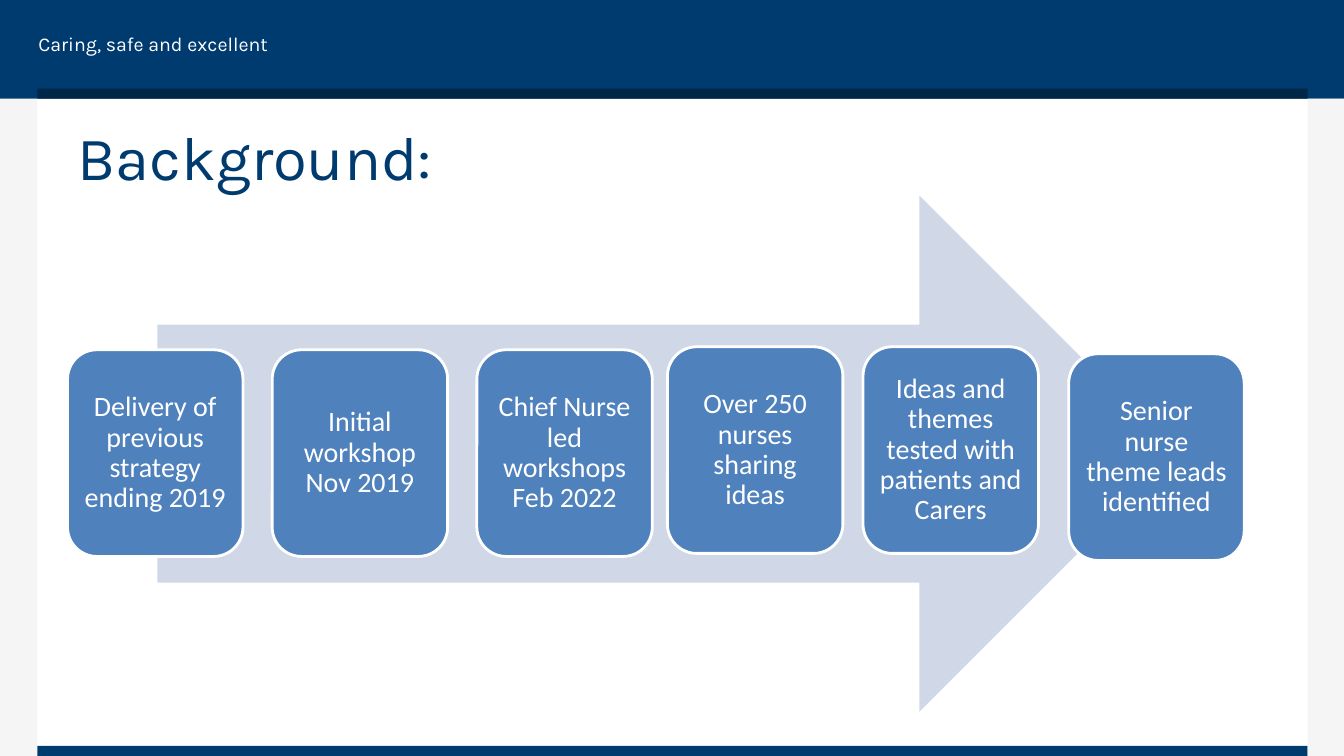
from pptx import Presentation
from pptx.dml.color import RGBColor
from pptx.enum.shapes import MSO_SHAPE as Shape
from pptx.enum.text import MSO_ANCHOR as Anchor, PP_ALIGN as Align
from pptx.util import Inches, Pt

NAVY = RGBColor(0x00, 0x3B, 0x6F)
DARK_NAVY = RGBColor(0x00, 0x26, 0x48)
MARGIN_GREY = RGBColor(0xF5, 0xF5, 0xF5)
ARROW_BLUE = RGBColor(0xD0, 0xD8, 0xE8)
STEP_BLUE = RGBColor(0x4F, 0x81, 0xBD)
WHITE = RGBColor(0xFF, 0xFF, 0xFF)

STEP_WIDTH, STEP_HEIGHT = 1.74, 2.05


def add_filled(kind, left, top, width, height, color):
    """Add a preset shape with a plain fill, no outline and no shadow."""
    shape = slide.shapes.add_shape(
        kind, Inches(left), Inches(top), Inches(width), Inches(height))
    shape.shadow.inherit = False
    shape.fill.solid()
    shape.fill.fore_color.rgb = color
    shape.line.fill.background()
    return shape


def set_font(paragraph, name, size, color):
    paragraph.font.name = name
    paragraph.font.size = Pt(size)
    paragraph.font.color.rgb = color


prs = Presentation()
prs.slide_width, prs.slide_height = Inches(13.33), Inches(7.5)
slide = prs.slides.add_slide(prs.slide_layouts[5])

# Page frame: side margins, header band and footer strip
for left, top, width, height, color in [
    (0, 0.98, 0.37, 6.52, MARGIN_GREY),
    (0, 0, 13.33, 0.98, NAVY),
    (0.37, 0.88, 12.6, 0.1, DARK_NAVY),
    (0.37, 7.4, 12.6, 0.1, NAVY),
    (12.97, 0.98, 0.36, 6.52, MARGIN_GREY),
]:
    add_filled(Shape.RECTANGLE, left, top, width, height, color)

motto = slide.shapes.add_textbox(
    Inches(0.38), Inches(0.32), Inches(4.09), Inches(0.24)).text_frame
motto.word_wrap = True
motto.margin_left = motto.margin_right = motto.margin_top = motto.margin_bottom = 0
motto.text = "Caring, safe and excellent"
set_font(motto.paragraphs[0], "Karla", 14, WHITE)

title = slide.shapes.title
title.left, title.top = Inches(0.67), Inches(0.92)
title.width, title.height = Inches(12), Inches(1.26)
title.text_frame.text = "Background:"
title.text_frame.vertical_anchor = Anchor.MIDDLE
title.text_frame.paragraphs[0].alignment = Align.LEFT
set_font(title.text_frame.paragraphs[0], "Karla", 44, NAVY)

# Timeline
add_filled(Shape.RIGHT_ARROW, 1.56, 1.94, 10.12, 5.12, ARROW_BLUE)

for left, top, label in [
    (0.67, 3.47, "Delivery of previous strategy ending 2019"),
    (2.7, 3.47, "Initial workshop Nov 2019"),
    (4.73, 3.47, "Chief Nurse led workshops Feb 2022"),
    (6.62, 3.44, "Over 250 nurses sharing ideas"),
    (8.56, 3.44, "Ideas and themes tested with patients and Carers"),
    (10.6, 3.51, "Senior nurse theme leads identified"),
]:
    step = add_filled(Shape.ROUNDED_RECTANGLE, left, top,
                      STEP_WIDTH, STEP_HEIGHT, STEP_BLUE)
    step.line.color.rgb = WHITE
    step.line.width = Pt(2)
    frame = step.text_frame
    frame.word_wrap = True
    frame.vertical_anchor = Anchor.MIDDLE
    frame.margin_left = frame.margin_right = Inches(0.08)
    frame.margin_top = frame.margin_bottom = Inches(0.08)
    frame.text = label
    paragraph = frame.paragraphs[0]
    paragraph.alignment = Align.CENTER
    paragraph.line_spacing = 0.9
    set_font(paragraph, "Calibri", 20, WHITE)

prs.save("out.pptx")
